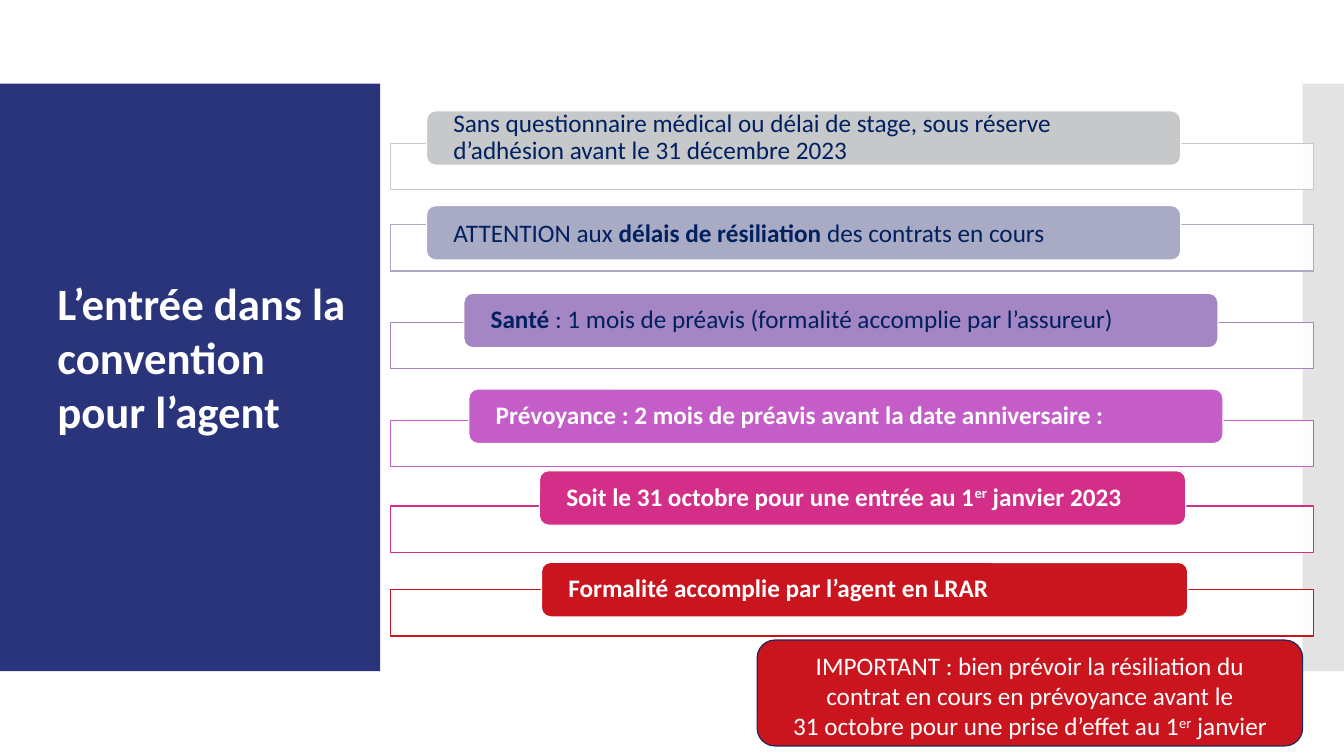
import lxml.etree
import pptx
import pptx.util
import pptx.dml.color
import pptx.enum.shapes
import pptx.enum.text
import pptx.oxml.ns

Inches = pptx.util.Inches
Pt = pptx.util.Pt
RGBColor = pptx.dml.color.RGBColor
MSO_SHAPE = pptx.enum.shapes.MSO_SHAPE
MSO_ANCHOR = pptx.enum.text.MSO_ANCHOR
PP_ALIGN = pptx.enum.text.PP_ALIGN
qn = pptx.oxml.ns.qn

WHITE = RGBColor(0xFF, 0xFF, 0xFF)
NAVY = RGBColor(0x00, 0x20, 0x60)
PANEL_BLUE = RGBColor(0x29, 0x34, 0x7B)
EDGE_BLUE = RGBColor(0x1E, 0x26, 0x5B)
STRIP_GRAY = RGBColor(0xC8, 0xC8, 0xC8)
GRAY = RGBColor(0xC7, 0xC8, 0xC9)
LAVENDER = RGBColor(0xA9, 0xAA, 0xC3)
PURPLE = RGBColor(0xA3, 0x86, 0xC3)
ORCHID = RGBColor(0xC5, 0x5D, 0xC8)
PINK = RGBColor(0xD3, 0x2F, 0x88)
RED = RGBColor(0xCA, 0x15, 0x1E)

prs = pptx.Presentation()
prs.slide_width = Inches(13.33)
prs.slide_height = Inches(7.5)
s = prs.slides.add_slide(prs.slide_layouts[6])


def add_box(kind, left, top, width, height, fill, line=None, opacity=100):
    sp = s.shapes.add_shape(kind, Inches(left), Inches(top), Inches(width), Inches(height))
    sp.shadow.inherit = False
    sp.fill.solid()
    sp.fill.fore_color.rgb = fill
    if opacity < 100:
        color = sp._element.spPr.find(qn("a:solidFill")).find(qn("a:srgbClr"))
        lxml.etree.SubElement(color, qn("a:alpha")).set("val", str(opacity * 1000))
    if line is None:
        sp.line.fill.background()
    else:
        sp.line.color.rgb = line
        sp.line.width = Pt(0.85)
    return sp


def write_text(sp, runs, color, size, side, edge, anchor, align):
    tf = sp.text_frame
    tf.word_wrap = True
    tf.vertical_anchor = anchor
    tf.margin_left = tf.margin_right = Inches(side)
    tf.margin_top = tf.margin_bottom = Inches(edge)
    p = tf.paragraphs[0]
    p.alignment = align
    p.font.name = "Calibri"
    p.font.size = Pt(size)
    p.font.color.rgb = color
    for text, style in runs:
        if "\v" in text:
            before, text = text.split("\v")
            p.add_run().text = before
            p.add_line_break()
        r = p.add_run()
        r.text = text
        if "bold" in style:
            r.font.bold = True
        if "super" in style:
            r._r.get_or_add_rPr().set("baseline", "30000")
    return p


add_box(MSO_SHAPE.RECTANGLE, 0, 0.83, 3.77, 5.83, PANEL_BLUE)
add_box(MSO_SHAPE.RECTANGLE, 12.92, 0.83, 0.41, 5.83, STRIP_GRAY, opacity=50)

title = s.shapes.add_textbox(Inches(0.47), Inches(2.69), Inches(3.2), Inches(1.72))
write_text(title, [("L’entrée dans la convention pour l’agent", "bold")],
           WHITE, 32, 0.1, 0.05, MSO_ANCHOR.TOP, PP_ALIGN.LEFT)

steps = [
    (1.42, 4.23, 1.1, 7.48, GRAY, NAVY, 0.9,
     [("Sans questionnaire médical ou délai de stage, sous réserve "
       "d’adhésion avant le 31 décembre 2023", "")]),
    (2.23, 4.23, 2.04, 7.48, LAVENDER, NAVY, 1.0,
     [("ATTENTION aux ", ""), ("délais de résiliation ", "bold"),
      ("des contrats en cours", "")]),
    (3.2, 4.6, 2.91, 7.48, PURPLE, NAVY, 0.9,
     [("Santé ", "bold"),
      (": 1 mois de préavis (formalité accomplie par l’assureur)", "")]),
    (4.17, 4.65, 3.86, 7.48, ORCHID, WHITE, 0.9,
     [("Prévoyance : 2 mois de préavis avant la date anniversaire :", "bold")]),
    (5.02, 5.35, 4.67, 6.41, PINK, WHITE, 0.9,
     [("Soit le 31 octobre pour une entrée au 1", "bold"), ("er", "bold super"),
      (" janvier 2023", "bold")]),
    (5.85, 5.37, 5.58, 6.41, RED, WHITE, 0.9,
     [("Formalité accomplie par l’agent en LRAR", "bold")]),
]
for frame_top, left, top, width, color, text_color, spacing, runs in steps:
    add_box(MSO_SHAPE.RECTANGLE, 3.87, frame_top, 9.16, 0.46, WHITE, color, 90)
    label = add_box(MSO_SHAPE.ROUNDED_RECTANGLE, left, top, width, 0.54, color, WHITE)
    p = write_text(label, runs, text_color, 18, 0.24, 0, MSO_ANCHOR.MIDDLE, PP_ALIGN.LEFT)
    p.line_spacing = spacing

notice = add_box(MSO_SHAPE.ROUNDED_RECTANGLE, 7.51, 6.35, 5.41, 1.05, RED, EDGE_BLUE)
write_text(notice,
           [("IMPORTANT : bien prévoir la résiliation du contrat en cours en prévoyance "
             "avant le\v31 octobre pour une prise d’effet au 1", ""),
            ("er", "super"), (" janvier", "")],
           WHITE, 18, 0.21, 0.05, MSO_ANCHOR.TOP, PP_ALIGN.CENTER)

prs.save("out.pptx")
